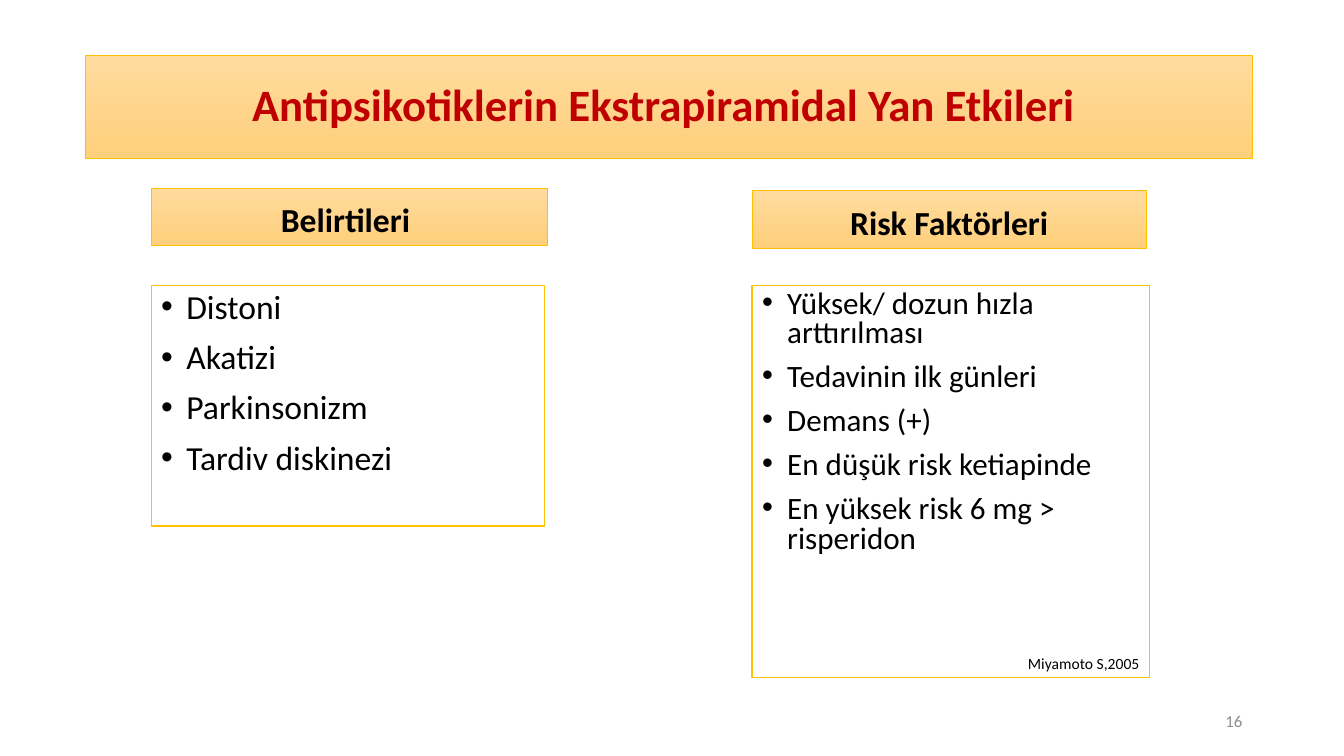
from lxml import etree
from pptx import Presentation
from pptx.dml.color import RGBColor
from pptx.enum.shapes import MSO_SHAPE
from pptx.enum.text import MSO_ANCHOR, PP_ALIGN
from pptx.oxml.ns import qn
from pptx.util import Inches, Pt

RECTANGLE = MSO_SHAPE.RECTANGLE
TOP, MIDDLE, BOTTOM = MSO_ANCHOR.TOP, MSO_ANCHOR.MIDDLE, MSO_ANCHOR.BOTTOM
LEFT, CENTER, RIGHT = PP_ALIGN.LEFT, PP_ALIGN.CENTER, PP_ALIGN.RIGHT

WHITE = RGBColor(0xFF, 0xFF, 0xFF)
BLACK = RGBColor(0x00, 0x00, 0x00)
RED = RGBColor(0xC0, 0x00, 0x00)
GRAY = RGBColor(0x8C, 0x8C, 0x8C)
GOLD = RGBColor(0xFF, 0xC0, 0x00)
BANNER_TOP = RGBColor(0xFF, 0xDB, 0x9E)
BANNER_BOTTOM = RGBColor(0xFF, 0xD0, 0x7C)

FONT = "Calibri"
SYMPTOMS = ["Distoni", "Akatizi", "Parkinsonizm", "Tardiv diskinezi"]
RISKS = [
    "Yüksek/ dozun hızla arttırılması",
    "Tedavinin ilk günleri",
    "Demans (+)",
    "En düşük risk ketiapinde",
    "En yüksek risk 6 mg > risperidon",
]


def set_format(target, values):
    for attribute, value in values.items():
        setattr(target, attribute, value)


def add_bullet(paragraph):
    properties = paragraph._p.get_or_add_pPr()
    properties.set("marL", str(Inches(0.25)))
    properties.set("indent", str(Inches(-0.25)))
    etree.SubElement(properties, qn("a:buFont")).set("typeface", "Arial")
    etree.SubElement(properties, qn("a:buChar")).set("char", "•")


def write_text(shape, lines, size, color=BLACK, bold=False, align=LEFT,
               anchor=TOP, spacing=0.9, before=0, bullets=False):
    frame = shape.text_frame
    set_format(frame, {"word_wrap": True, "vertical_anchor": anchor})
    for index, line in enumerate(lines):
        paragraph = frame.add_paragraph() if index else frame.paragraphs[0]
        set_format(paragraph, {"alignment": align, "line_spacing": spacing,
                               "space_before": Pt(before)})
        if bullets:
            add_bullet(paragraph)
        run = paragraph.add_run()
        run.text = line
        set_format(run.font, {"name": FONT, "size": Pt(size), "bold": bold})
        run.font.color.rgb = color


def add_box(slide, bounds, line_width):
    box = slide.shapes.add_shape(RECTANGLE, *map(Inches, bounds))
    box.shadow.inherit = False
    box.line.color.rgb = GOLD
    box.line.width = Pt(line_width)
    return box


def add_banner(slide, bounds, text, **text_format):
    banner = add_box(slide, bounds, 0.5)
    banner.fill.gradient()
    banner.fill.gradient_angle = 270
    for stop, color in zip(banner.fill.gradient_stops, (BANNER_TOP, BANNER_BOTTOM)):
        stop.color.rgb = color
    write_text(banner, [text], bold=True, align=CENTER, **text_format)


def add_list(slide, bounds, items, size, spacing):
    panel = add_box(slide, bounds, 1)
    panel.fill.solid()
    panel.fill.fore_color.rgb = WHITE
    write_text(panel, items, size, spacing=spacing, before=10, bullets=True)


def add_note(slide, bounds, text, **text_format):
    note = slide.shapes.add_textbox(*map(Inches, bounds))
    write_text(note, [text], align=RIGHT, **text_format)


def main():
    presentation = Presentation()
    presentation.slide_width = Inches(13.33)
    presentation.slide_height = Inches(7.5)
    slide = presentation.slides.add_slide(presentation.slide_layouts[6])

    add_banner(slide, (0.85, 0.55, 11.57, 1.02),
               "Antipsikotiklerin Ekstrapiramidal Yan Etkileri ",
               size=32, color=RED, anchor=MIDDLE)

    heading = {"size": 24, "anchor": BOTTOM, "before": 10}
    add_banner(slide, (1.5, 1.87, 3.93, 0.56), "Belirtileri ", **heading)
    add_list(slide, (1.5, 2.83, 3.9, 2.39), SYMPTOMS, 24, 0.9)
    add_banner(slide, (7.46, 1.89, 3.91, 0.57), "Risk Faktörleri", **heading)
    add_list(slide, (7.46, 2.83, 3.94, 3.89), RISKS, 22.2, 0.8)

    add_note(slide, (7.46, 6.32, 3.94, 0.4), "Miyamoto S,2005",
             size=11.1, anchor=BOTTOM, spacing=0.8)
    add_note(slide, (9.42, 6.95, 3, 0.4), "16",
             size=12, color=GRAY, anchor=MIDDLE, spacing=1.0)

    presentation.save("out.pptx")


if __name__ == "__main__":
    main()
